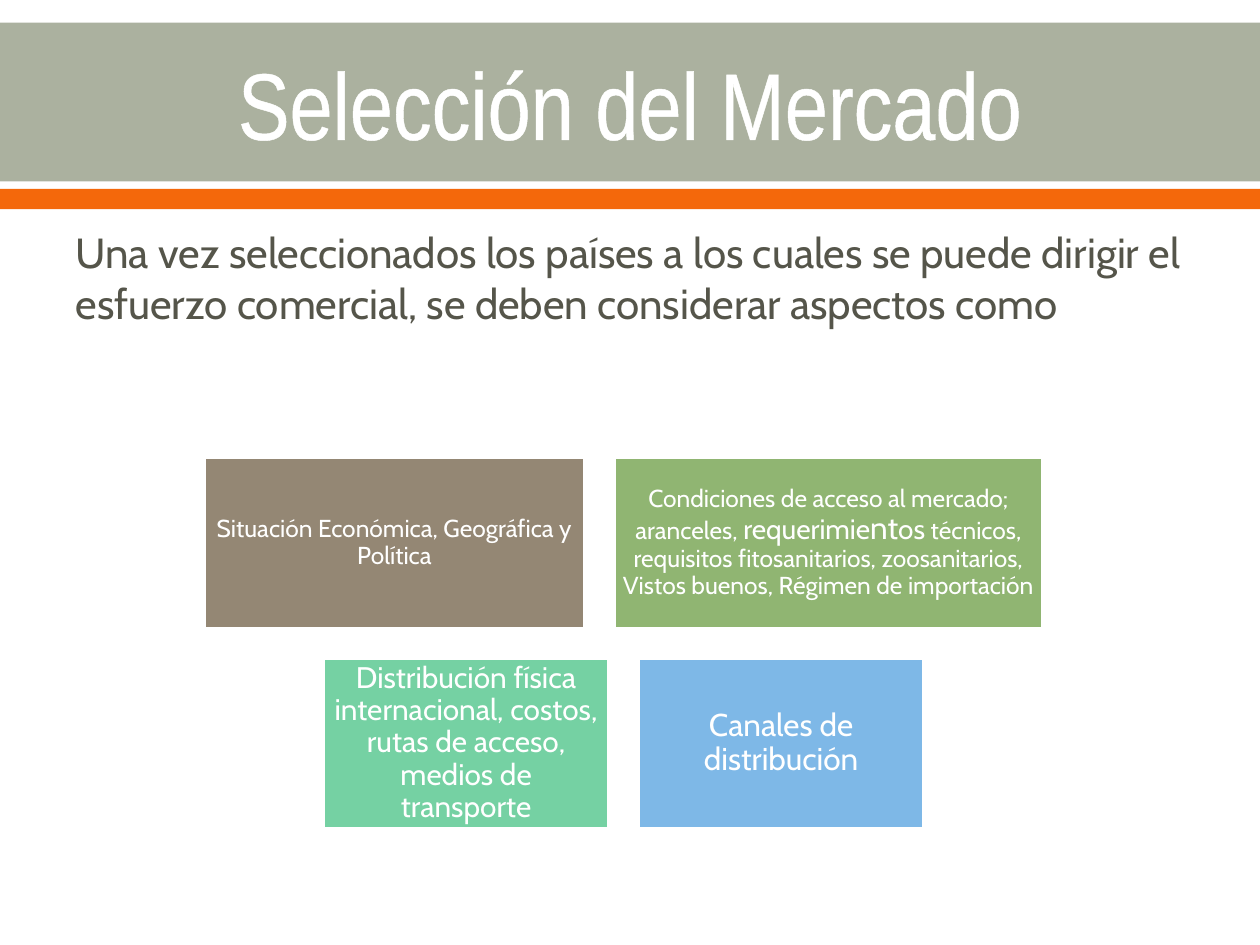
from dataclasses import dataclass

from lxml.etree import SubElement
from pptx import Presentation
from pptx.dml.color import RGBColor
from pptx.enum.shapes import MSO_SHAPE as Shape
from pptx.enum.text import MSO_ANCHOR as Anchor, MSO_AUTO_SIZE as AutoSize, PP_ALIGN as Align
from pptx.oxml import parse_xml
from pptx.oxml.ns import nsdecls, qn
from pptx.util import Pt

PX = 9144


@dataclass(frozen=True)
class Theme:
    """Colours, fonts and type sizes of the slide."""
    white: str = "FFFFFF"
    ink: str = "55554A"
    sage: str = "ABB19F"
    orange: str = "F4680B"
    brown: str = "948774"
    green: str = "90B572"
    mint: str = "75D1A3"
    blue: str = "7EB8E7"
    title_font: str = "Arial Narrow"
    body_font: str = "Cabin"
    title_size: int = 54
    lead_size: int = 24
    small: int = 14
    medium: int = 16
    large: int = 17
    largest: int = 18


THEME = Theme()

CARD_ROWS = [
    [
        (302, THEME.brown, 6, [("Situación Económica, Geográfica y Política", THEME.small)]),
        (341, THEME.green, 6, [
            ("Condiciones de acceso al mercado; aranceles, ", THEME.small),
            ("requerimie", THEME.medium),
            ("nt", THEME.largest),
            ("os", THEME.medium),
            (" técnicos, requisitos fitosanitarios, zoosanitarios, "
             "Vistos buenos, Régimen de importación", THEME.small),
        ]),
    ],
    [
        (227, THEME.mint, 7, [("Distribución física internacional, costos, rutas de acceso, "
                               "medios de transporte", THEME.large)]),
        (227, THEME.blue, 7, [("Canales de distribución", THEME.largest)]),
    ],
]


def place(item, box):
    """Move a shape to a box given in px."""
    item.left, item.top, item.width, item.height = (round(length * PX) for length in box)


def style(span, font, size, color):
    """Set the font, size and colour of a run."""
    span.font.name = font
    span.font.size = Pt(size)
    span.font.color.rgb = RGBColor.from_string(color)


def add_block(page, box, color):
    """Add a plain filled rectangle."""
    block = page.shapes.add_shape(Shape.RECTANGLE, *(round(length * PX) for length in box))
    block.shadow.inherit = False
    block.fill.solid()
    block.fill.fore_color.rgb = RGBColor.from_string(color)
    block.line.fill.background()
    return block


def add_header(page, box):
    """Fill the header with two bands and the title in front of them."""
    left, top, width, height = box
    title = page.shapes.title
    for band_top, band_height, color in ((0, 126, THEME.sage), (132, 16, THEME.orange)):
        band = add_block(page, (left, top + band_top, width, band_height), color)
        title.element.addprevious(band.element)
    place(title, (left + 50, top + 2, width - 100, 122))
    frame = title.text_frame
    frame.text = "Selección del Mercado"
    frame.auto_size = AutoSize.NONE
    frame.vertical_anchor = Anchor.MIDDLE
    para = frame.paragraphs[0]
    para.alignment = Align.CENTER
    span = para.runs[0]
    style(span, THEME.title_font, THEME.title_size, THEME.white)
    outline = parse_xml(
        f'<a:ln {nsdecls("a")} w="{Pt(1.1)}"><a:solidFill>'
        f'<a:srgbClr val="{THEME.white}"/></a:solidFill></a:ln>')
    span.font._element.insert(0, outline)


def add_lead(page, box):
    """Fill the body placeholder with the unbulleted lead sentence."""
    body = page.placeholders[1]
    place(body, box)
    frame = body.text_frame
    frame.text = ("Una vez seleccionados los países a los cuales se puede dirigir el "
                  "esfuerzo comercial, se deben considerar aspectos como")
    frame.auto_size = AutoSize.NONE
    para = frame.paragraphs[0]
    para.space_before = Pt(5)
    properties = para._p.get_or_add_pPr()
    properties.set("marL", "0")
    properties.set("indent", "0")
    SubElement(properties, qn("a:buNone"))
    style(para.runs[0], THEME.body_font, THEME.lead_size, THEME.ink)


def add_card(page, box, color, inset, parts):
    """Add a white-edged card with centred text."""
    card = add_block(page, box, color)
    card.line.color.rgb = RGBColor.from_string(THEME.white)
    card.line.width = Pt(2.22)
    frame = card.text_frame
    frame.word_wrap = True
    frame.vertical_anchor = Anchor.MIDDLE
    frame.margin_left = frame.margin_right = inset * PX
    frame.margin_top = frame.margin_bottom = inset * PX
    para = frame.paragraphs[0]
    para.alignment = Align.CENTER
    para.line_spacing = 0.9
    para.space_after = Pt(5)
    for text, size in parts:
        span = para.add_run()
        span.text = text
        style(span, THEME.body_font, size, THEME.white)


def add_cards(page, box, gap):
    """Lay out the rows of cards, each row centred in the box."""
    left, top, width, height = box
    row_height = (height - gap * (len(CARD_ROWS) - 1)) / len(CARD_ROWS)
    for index, row in enumerate(CARD_ROWS):
        row_width = sum(card[0] for card in row) + gap * (len(row) - 1)
        card_left = left + (width - row_width) / 2
        card_top = top + index * (row_height + gap)
        for card_width, color, inset, parts in row:
            add_card(page, (card_left, card_top, card_width, row_height), color, inset, parts)
            card_left += card_width + gap


def main():
    """Build and save the slide."""
    deck = Presentation()
    deck.slide_width, deck.slide_height = 1000 * PX, 750 * PX
    page = deck.slides.add_slide(deck.slide_layouts[1])
    add_header(page, (0, 18, 1000, 148))
    add_lead(page, (50, 175, 900, 495))
    add_cards(page, (162, 363, 666, 295), 23)
    deck.save("out.pptx")


if __name__ == "__main__":
    main()
